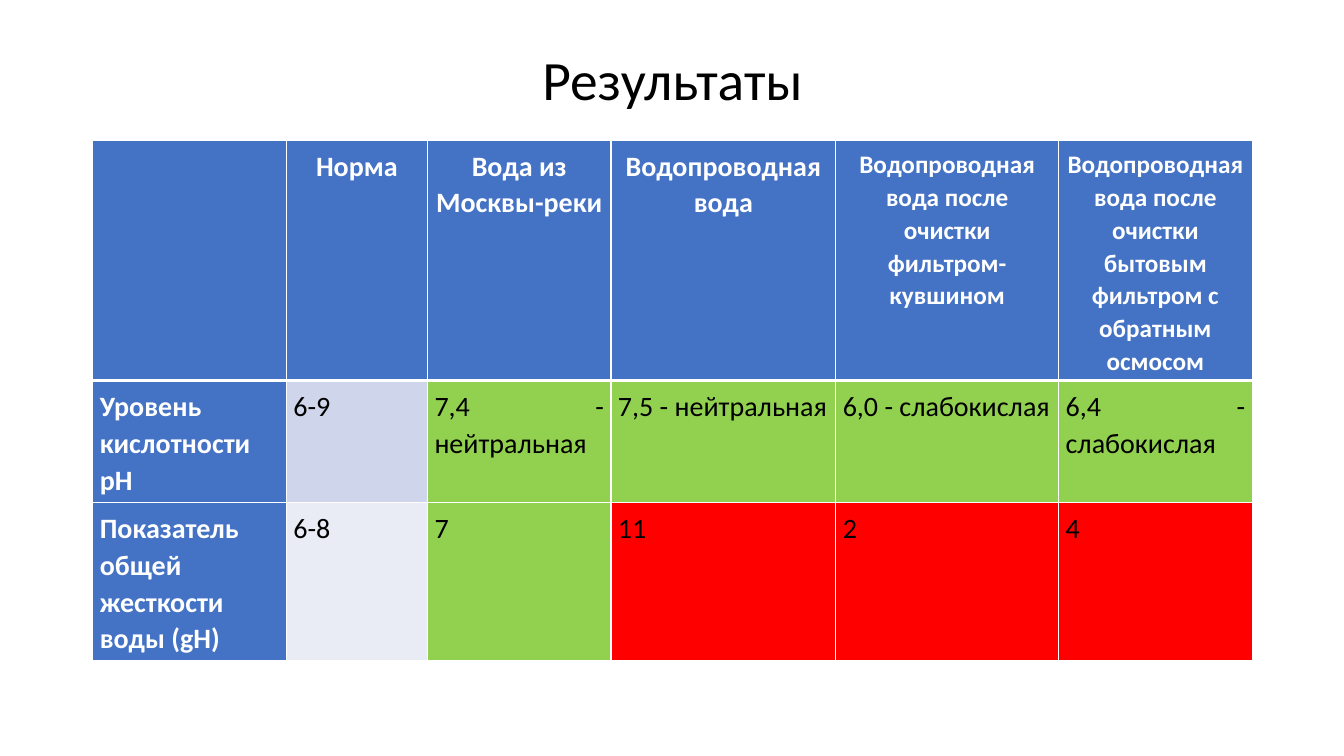
import pptx
import pptx.util
import pptx.dml.color
import pptx.enum.text
import pptx.oxml.ns
import lxml.etree

COLORS = {
    "white": "FFFFFF", "black": "000000", "blue": "4472C4",
    "pale": "CFD5EA", "paler": "E9EBF5", "green": "92D050", "red": "FF0000",
}
ALIGN = pptx.enum.text.PP_ALIGN
ANCHOR = pptx.enum.text.MSO_ANCHOR
LEFT, WIDTH = 0.92, 11.5
COLUMNS = [1.92, 1.4, 1.82, 2.23, 2.21, 1.92]
ROWS = [2.14, 1.03, 1.3]
TABLE_HEIGHT = 5.16

CELLS = [
    ["", "Норма", "Вода из Москвы-реки", "Водопроводная вода",
     "Водопроводная вода после очистки фильтром-кувшином",
     "Водопроводная вода после очистки бытовым фильтром с обратным осмосом"],
    ["Уровень кислотности pH", "6-9", "7,4 - нейтральная", "7,5 - нейтральная",
     "6,0 - слабокислая", "6,4 - слабокислая"],
    ["Показатель общей жесткости воды (gH)", "6-8", "7", "11", "2", "4"],
]
FILLS = [
    ["blue"] * 6,
    ["blue", "pale"] + ["green"] * 4,
    ["blue", "paler", "green"] + ["red"] * 3,
]


def format_text(para, size, color, bold=False):
    for span in para.runs:
        span.font.name = "Calibri"
        span.font.size = pptx.util.Pt(size)
        span.font.bold = bold
        span.font.color.rgb = pptx.dml.color.RGBColor.from_string(COLORS[color])


def add_borders(cell, bottom_points, top_points):
    properties = cell._tc.get_or_add_tcPr()
    widths = {"lnL": 1, "lnR": 1, "lnT": top_points, "lnB": bottom_points}
    for position, (side, points) in enumerate(widths.items()):
        line = lxml.etree.Element(pptx.oxml.ns.qn("a:" + side), w=str(pptx.util.Pt(points)))
        fill = lxml.etree.SubElement(line, pptx.oxml.ns.qn("a:solidFill"))
        lxml.etree.SubElement(fill, pptx.oxml.ns.qn("a:srgbClr"), val=COLORS["white"])
        properties.insert(position, line)


deck = pptx.Presentation()
deck.slide_width = pptx.util.Inches(13.33)
deck.slide_height = pptx.util.Inches(7.5)
page = deck.slides.add_slide(deck.slide_layouts[6])

# Title
title = page.shapes.add_textbox(*map(pptx.util.Inches, (LEFT, 0.52, WIDTH, 0.59)))
title.text_frame.word_wrap = True
title.text_frame.vertical_anchor = ANCHOR.MIDDLE
title.text_frame.text = "Результаты"
para = title.text_frame.paragraphs[0]
para.alignment = ALIGN.CENTER
para.line_spacing = 0.9
format_text(para, 39.6, "black")

# Results table
frame = page.shapes.add_table(
    len(ROWS), len(COLUMNS), *map(pptx.util.Inches, (LEFT, 1.39, WIDTH, TABLE_HEIGHT)))
table = frame.table
for column, width in zip(table.columns, COLUMNS):
    column.width = pptx.util.Inches(width)
for row, height in zip(table.rows, ROWS):
    row.height = pptx.util.Inches(height)
frame.height = pptx.util.Inches(TABLE_HEIGHT)

# Cell text, fills and borders
for row_index, (texts, fills) in enumerate(zip(CELLS, FILLS)):
    header = row_index == 0
    for column_index, (text, fill) in enumerate(zip(texts, fills)):
        cell = table.cell(row_index, column_index)
        cell.fill.solid()
        cell.fill.fore_color.rgb = pptx.dml.color.RGBColor.from_string(COLORS[fill])
        cell.margin_left = cell.margin_right = pptx.util.Inches(0.07)
        cell.margin_top = cell.margin_bottom = pptx.util.Inches(0.07)
        add_borders(cell, 3 if header else 1, 3 if row_index == 1 else 1)
        if not text:
            continue
        cell.text_frame.text = text
        para = cell.text_frame.paragraphs[0]
        para.alignment = ALIGN.CENTER if header else ALIGN.JUSTIFY
        para.line_spacing = 1.07
        para.space_before = pptx.util.Pt(12)
        para.space_after = pptx.util.Pt(8)
        label = fill == "blue"
        size = 18 if header and column_index >= 4 else 20
        format_text(para, size, "white" if label else "black", label)

deck.save("out.pptx")
